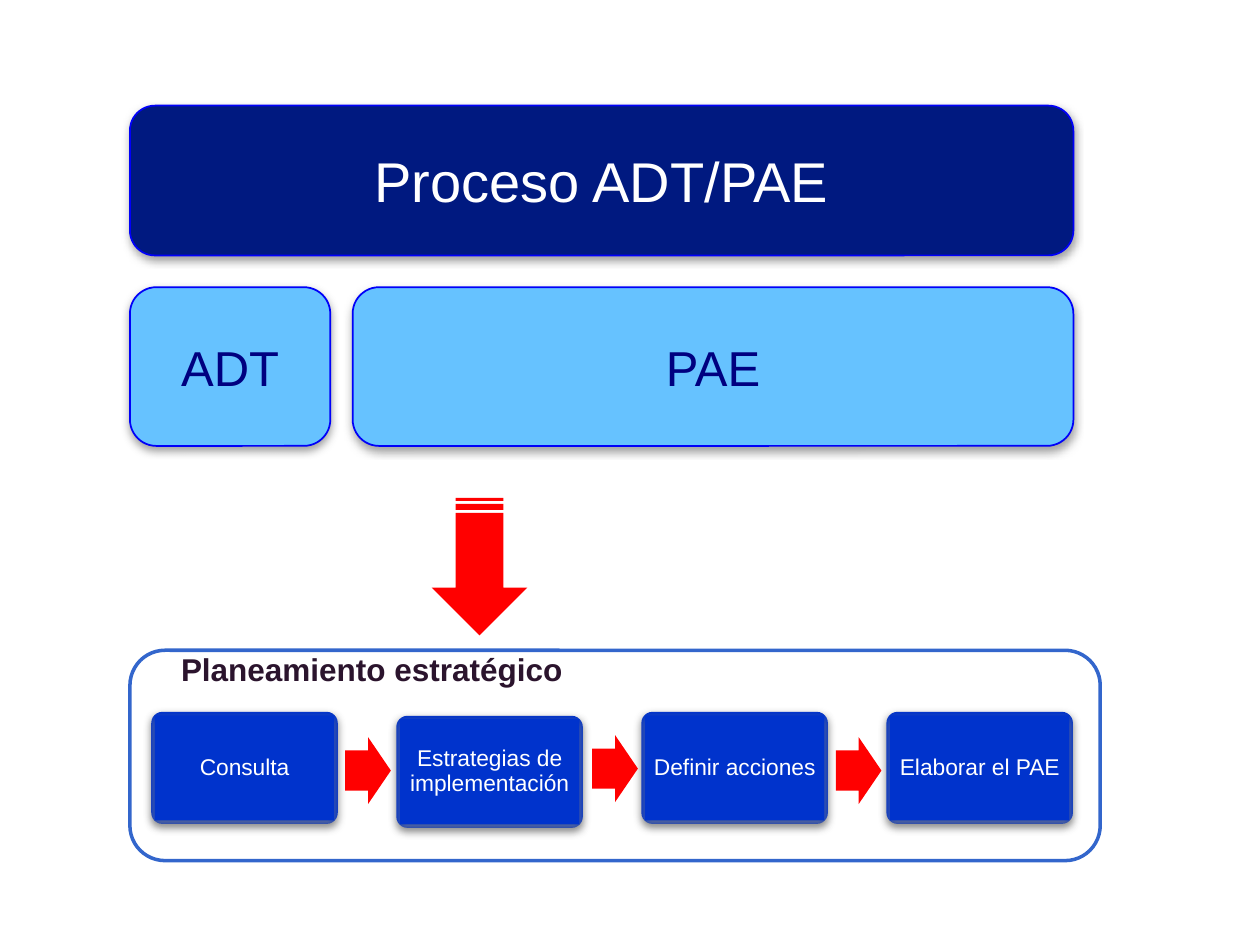
from lxml import etree
from pptx import Presentation
from pptx.dml.color import RGBColor
from pptx.enum.shapes import MSO_SHAPE
from pptx.enum.text import MSO_ANCHOR, PP_ALIGN
from pptx.oxml.ns import qn
from pptx.util import Cm, Pt

RECTANGLE = MSO_SHAPE.RECTANGLE
ROUNDED = MSO_SHAPE.ROUNDED_RECTANGLE
RIGHT_ARROW = MSO_SHAPE.RIGHT_ARROW
STRIPED_ARROW = MSO_SHAPE.STRIPED_RIGHT_ARROW
CENTER = PP_ALIGN.CENTER
MIDDLE = MSO_ANCHOR.MIDDLE

WHITE = RGBColor(0xFF, 0xFF, 0xFF)
RED = RGBColor(0xFF, 0x00, 0x00)
NAVY = RGBColor(0x00, 0x19, 0x80)
SKY = RGBColor(0x66, 0xC2, 0xFF)
BLUE = RGBColor(0x00, 0x33, 0xCC)
DARK_BLUE = RGBColor(0x00, 0x00, 0x80)
OUTLINE = RGBColor(0x00, 0x00, 0xF9)
FRAME = RGBColor(0x33, 0x66, 0xCC)
PLUM = RGBColor(0x2B, 0x14, 0x2D)
SHADOW = RGBColor(0x80, 0x80, 0x80)


def add_block(shapes, kind, box, fill=None, line=None, line_width=1, shadow=False):
    """Add a preset shape; box is left, top, width and height in centimetres."""
    block = shapes.add_shape(kind, *(Cm(length) for length in box))
    block.shadow.inherit = False
    if fill is None:
        block.fill.background()
    else:
        block.fill.solid()
        block.fill.fore_color.rgb = fill
    if line is None:
        block.line.fill.background()
    else:
        block.line.color.rgb = line
        block.line.width = Pt(line_width)
    if shadow:
        effects = block._element.spPr.find(qn("a:effectLst"))
        outer = etree.SubElement(effects, qn("a:outerShdw"), blurRad=str(Pt(5)),
                                 dist=str(Pt(2)), dir="5400000", rotWithShape="0")
        color = etree.SubElement(outer, qn("a:srgbClr"), val=str(SHADOW))
        etree.SubElement(color, qn("a:alpha"), val="75000")
    return block


def add_label(block, text, size, color, align=CENTER, bold=False):
    frame = block.text_frame
    frame.word_wrap = True
    paragraph = frame.paragraphs[0]
    paragraph.alignment = align
    run = paragraph.add_run()
    run.text = text
    run.font.name = "Arial"
    run.font.size = Pt(size)
    run.font.bold = bold
    run.font.color.rgb = color
    return frame


presentation = Presentation()
presentation.slide_width = Cm(25.4)
presentation.slide_height = Cm(19.05)
slide = presentation.slides.add_slide(presentation.slide_layouts[6])
shapes = slide.shapes

# Strategic planning steps
STEP_LEFT, STEP_PITCH, STEP_WIDTH, STEP_HEIGHT = 3.05, 4.94, 3.76, 2.26
INSET = 0.07
steps = [
    ("Consulta", 14.35),
    ("Estrategias de implementación", 14.43),
    ("Definir acciones", 14.35),
    ("Elaborar el PAE", 14.35),
]
for index, (step, top) in enumerate(steps):
    left = STEP_LEFT + index * STEP_PITCH
    card = shapes.add_group_shape().shapes
    edge = add_block(card, ROUNDED, (left, top, STEP_WIDTH, STEP_HEIGHT), BLUE, shadow=True)
    edge.adjustments[0] = 0.1
    face = add_block(card, RECTANGLE,
                     (left + INSET, top + INSET, STEP_WIDTH - 2 * INSET, STEP_HEIGHT - 2 * INSET),
                     BLUE, shadow=True)
    frame = add_label(face, step, 13, WHITE)
    frame.vertical_anchor = MIDDLE
    frame.margin_left = frame.margin_right = Cm(0.13)
    frame.margin_top = frame.margin_bottom = Cm(0.13)
    frame.paragraphs[0].line_spacing = 0.9

for left, top in [(6.96, 14.86), (11.94, 14.82), (16.85, 14.86)]:
    step_arrow = add_block(shapes, RIGHT_ARROW, (left, top, 0.92, 1.35), RED)
    step_arrow.adjustments[0] = 0.6
    step_arrow.adjustments[1] = 0.5

# Frame and heading around the steps
add_block(shapes, ROUNDED, (2.62, 13.11, 19.56, 4.24), line=FRAME, line_width=2)
heading = shapes.add_textbox(Cm(3.4), Cm(12.98), Cm(8.56), Cm(1.02))
add_label(heading, "Planeamiento estratégico", 18, PLUM, PP_ALIGN.LEFT, bold=True)

down_arrow = add_block(shapes, STRIPED_ARROW, (8.28, 10.46, 2.77, 1.93), RED)
down_arrow.rotation = 90

# Process and its two parts
process_blocks = [
    ("Proceso ADT/PAE", (2.62, 2.13, 19.02, 3.02), NAVY, 32, WHITE),
    ("ADT", (2.62, 5.79, 4.04, 3.2), SKY, 28, DARK_BLUE),
    ("PAE", (7.11, 5.79, 14.53, 3.2), SKY, 28, DARK_BLUE),
]
for text, box, fill, size, color in process_blocks:
    block = add_block(shapes, ROUNDED, box, fill, OUTLINE, shadow=True)
    add_label(block, text, size, color).vertical_anchor = MIDDLE

presentation.save("out.pptx")
